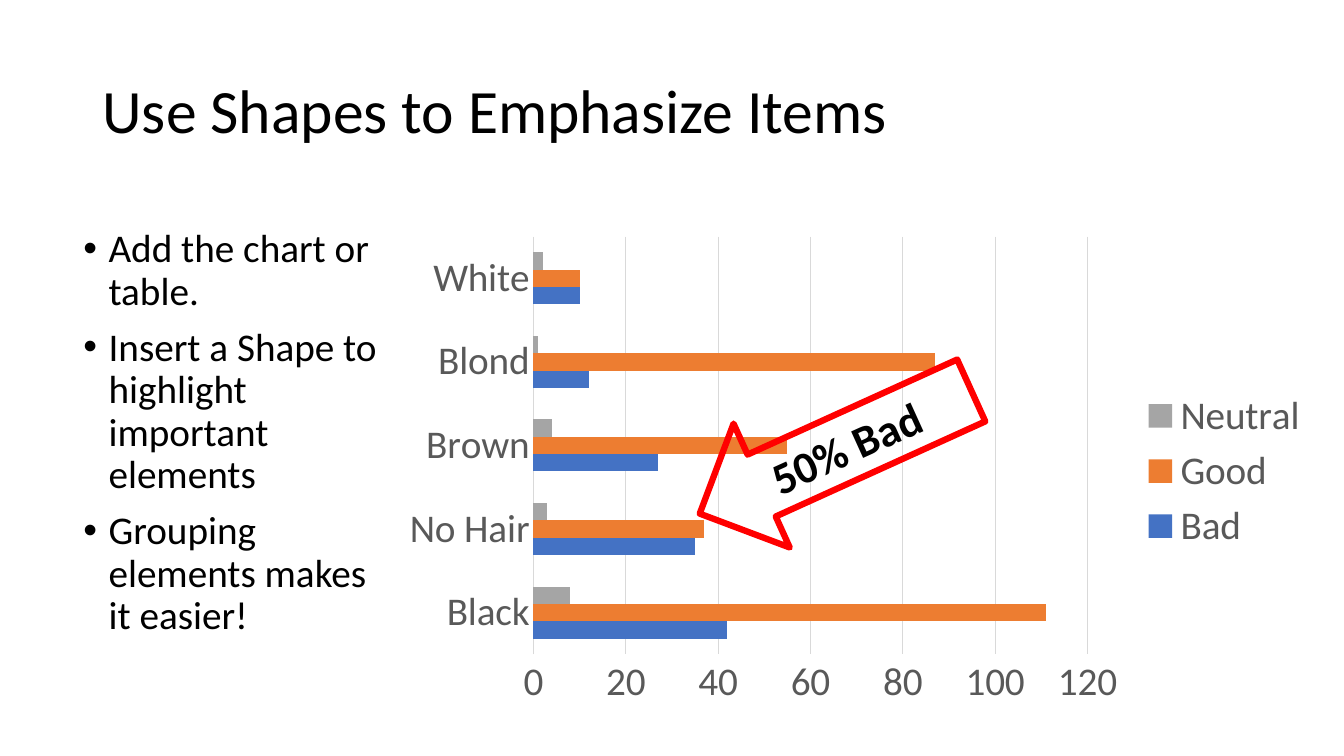
from lxml import etree
from pptx import Presentation
from pptx.chart.data import CategoryChartData
from pptx.dml.color import RGBColor
from pptx.enum import chart as kinds, shapes, text
from pptx.oxml.ns import qn
from pptx.util import Pt

BLACK = RGBColor(0x00, 0x00, 0x00)
GRAY = RGBColor(0x59, 0x59, 0x59)
GRID = RGBColor(0xD9, 0xD9, 0xD9)
RED = RGBColor(0xFF, 0x00, 0x00)
BLUE = RGBColor(0x44, 0x72, 0xC4)
ORANGE = RGBColor(0xED, 0x7D, 0x31)
SILVER = RGBColor(0xA5, 0xA5, 0xA5)

HAIR_COLORS = ["Black", "No Hair", "Brown", "Blond", "White"]
ALIGNMENTS = [
    ("Bad", [42, 35, 27, 12, 10], BLUE),
    ("Good", [111, 37, 55, 87, 10], ORANGE),
    ("Neutral", [8, 3, 4, 1, 2], SILVER),
]
TIPS = [
    "Add the chart or table.",
    "Insert a Shape to highlight important elements",
    "Grouping elements makes it easier!",
]
TILT = 335.6


def set_font(font, size, color, bold=False):
    font.name = "Calibri"
    font.size = Pt(size)
    font.color.rgb = color
    font.bold = bold


deck = Presentation()
deck.slide_width, deck.slide_height = Pt(960), Pt(540)
page = deck.slides.add_slide(deck.slide_layouts[5])

# Title
title = page.shapes.title
title.left, title.top, title.width, title.height = Pt(66), Pt(28.8), Pt(828), Pt(104.4)
title.text_frame.text = "Use Shapes to Emphasize Items"
title.text_frame.vertical_anchor = text.MSO_ANCHOR.MIDDLE
para = title.text_frame.paragraphs[0]
para.alignment = text.PP_ALIGN.LEFT
para.line_spacing = 0.9
set_font(para.font, 44, BLACK)

# Bulleted tips
tips_box = page.shapes.add_textbox(Pt(52.5), Pt(160), Pt(226), Pt(349))
tips_box.text_frame.word_wrap = True
tips_box.text_frame.text = "\n".join(TIPS)
for para in tips_box.text_frame.paragraphs:
    para.line_spacing = 0.9
    para.space_before = Pt(10)
    set_font(para.font, 28, BLACK)
    props = para._p.get_or_add_pPr()
    props.set("marL", str(Pt(18)))
    props.set("indent", str(Pt(-18)))
    bullet_font = etree.Element(qn("a:buFont"), typeface="Arial")
    bullet = etree.Element(qn("a:buChar"), char="•")
    props.find(qn("a:defRPr")).addprevious(bullet_font)
    bullet_font.addnext(bullet)

# Bar chart
data = CategoryChartData()
data.categories = HAIR_COLORS
for name, values, color in ALIGNMENTS:
    data.add_series(name, values)
chart = page.shapes.add_chart(
    kinds.XL_CHART_TYPE.BAR_CLUSTERED, Pt(279.5), Pt(162), Pt(664), Pt(349), data
).chart
set_font(chart.font, 10, BLACK)
chart.has_title = False
chart.has_legend = True
chart.legend.position = kinds.XL_LEGEND_POSITION.RIGHT
chart.legend.include_in_layout = False
set_font(chart.legend.font, 28, GRAY)

plot = chart.plots[0]
plot.gap_width = 182
plot.vary_by_categories = False
for series, (name, values, color) in zip(plot.series, ALIGNMENTS):
    series.format.fill.solid()
    series.format.fill.fore_color.rgb = color

for axis in (chart.category_axis, chart.value_axis):
    axis.major_tick_mark = axis.minor_tick_mark = kinds.XL_TICK_MARK.NONE
    set_font(axis.tick_labels.font, 28, GRAY)
chart.value_axis.has_major_gridlines = True
chart.value_axis.format.line.fill.background()
for line in (chart.category_axis.format.line, chart.value_axis.major_gridlines.format.line):
    line.color.rgb = GRID
    line.width = Pt(0.75)

# Arrow and its label, grouped
callout = page.shapes.add_group_shape()
arrow = callout.shapes.add_shape(
    shapes.MSO_SHAPE.LEFT_ARROW, Pt(490.3), Pt(274.3), Pt(213), Pt(97.2)
)
arrow.rotation = TILT
arrow.shadow.inherit = False
arrow.fill.background()
arrow.line.color.rgb = RED
arrow.line.width = Pt(4.5)

label = callout.shapes.add_textbox(Pt(539.3), Pt(292.3), Pt(148.3), Pt(46))
label.rotation = TILT
label.text_frame.word_wrap = True
label.text_frame.auto_size = text.MSO_AUTO_SIZE.SHAPE_TO_FIT_TEXT
label.text_frame.text = "50% Bad"
set_font(label.text_frame.paragraphs[0].font, 32, BLACK, bold=True)

deck.save("out.pptx")
